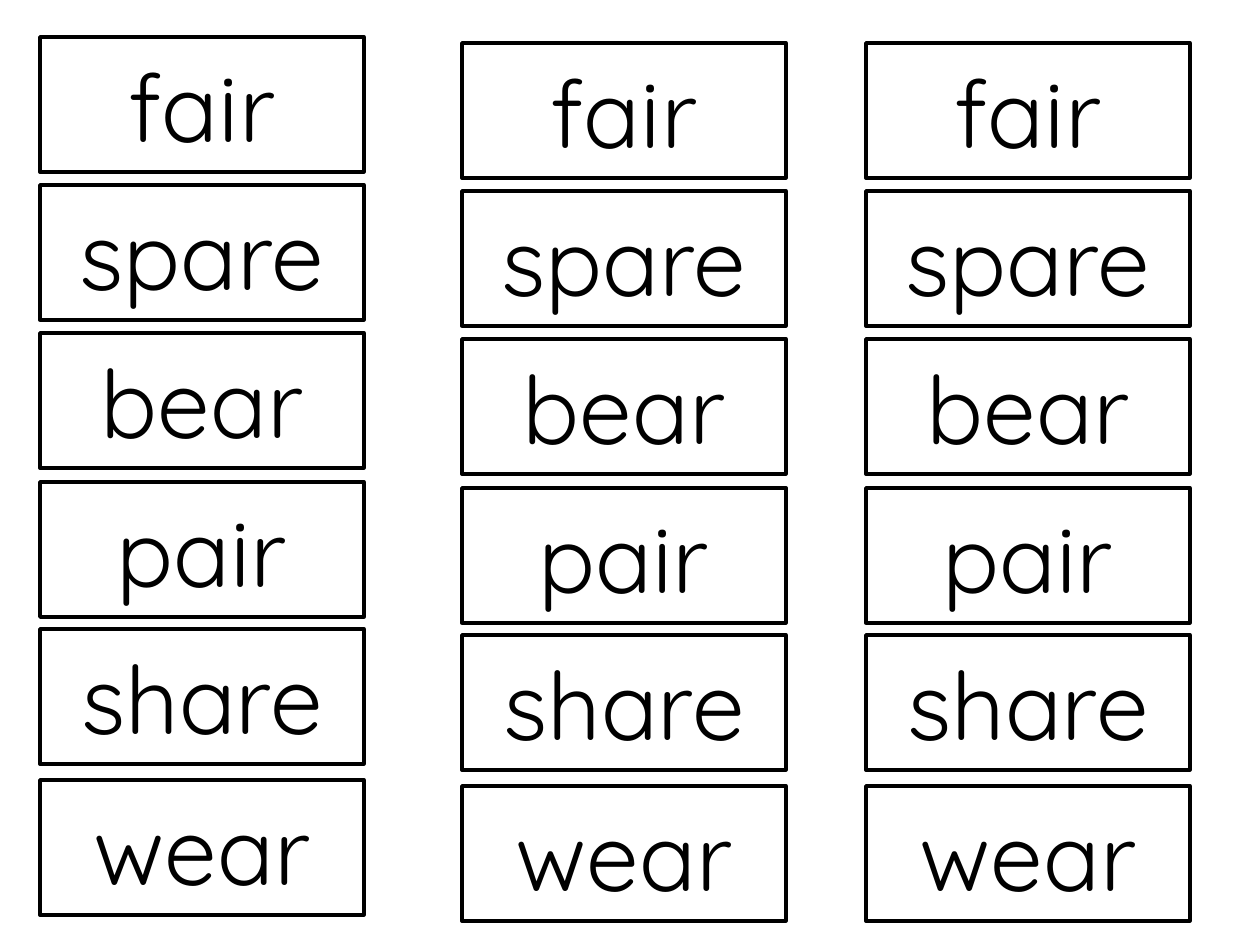
from pptx import Presentation
from pptx.dml.color import RGBColor
from pptx.enum.shapes import MSO_SHAPE
from pptx.enum.text import MSO_ANCHOR, PP_ALIGN
from pptx.util import Inches, Pt

PX_PER_INCH = 126
COLORS = {"ink": "000000", "card": "FFFFFF"}
FONT = "Quicksand"
CARD_W, CARD_H = 324, 135
COLUMNS = [(40, 37), (462, 43), (866, 43)]
WORD_OFFSETS = {"fair": 0, "spare": 148, "bear": 296,
                "pair": 445, "share": 592, "wear": 743}


def px(n):
    """Turn whole pixels into EMU."""
    return Inches(n / PX_PER_INCH)


def color(name):
    """Look up a named colour."""
    return RGBColor.from_string(COLORS[name])


def add_card(shapes, word, left, top):
    """Add one outlined word card."""
    sp = shapes.add_shape(MSO_SHAPE.RECTANGLE, px(left), px(top), px(CARD_W), px(CARD_H))
    sp.shadow.inherit = False
    sp.fill.solid()
    sp.fill.fore_color.rgb = color("card")
    sp.line.color.rgb = color("ink")
    sp.line.width = Pt(2)
    tf = sp.text_frame
    tf.word_wrap = True
    tf.vertical_anchor = MSO_ANCHOR.MIDDLE
    p = tf.paragraphs[0]
    p.text = word
    p.alignment = PP_ALIGN.CENTER
    p.font.name = FONT
    p.font.size = Pt(54)
    p.font.color.rgb = color("ink")


def add_card_column(s, left, top):
    """Add a grouped column holding every word card."""
    group = s.shapes.add_group_shape()
    for word, offset in WORD_OFFSETS.items():
        add_card(group.shapes, word, left, top + offset)


def main():
    """Build the slide of word cards."""
    prs = Presentation()
    prs.slide_width, prs.slide_height = Inches(10), Inches(7.5)
    s = prs.slides.add_slide(prs.slide_layouts[6])
    for left, top in COLUMNS:
        add_card_column(s, left, top)
    prs.save("out.pptx")


if __name__ == "__main__":
    main()
